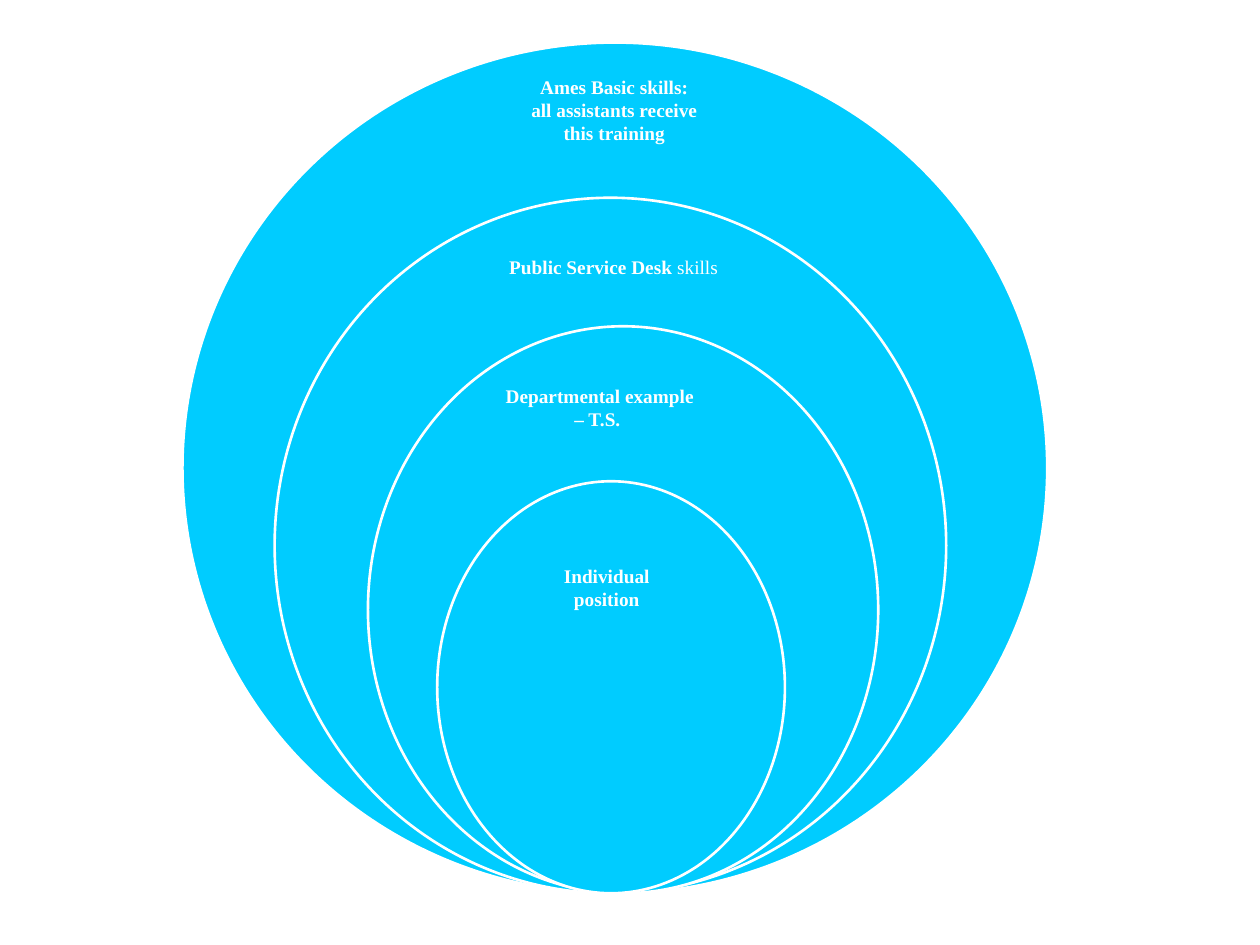
from pptx import Presentation
from pptx.dml.color import RGBColor
from pptx.enum.shapes import MSO_SHAPE
from pptx.enum.text import MSO_ANCHOR, PP_ALIGN
from pptx.util import Inches, Pt

COLORS = {"ring": "00CCFF", "ink": "FFFFFF"}
FONT, SIZE = "Times New Roman", 11
WIDE, HIGH = Inches(10), Inches(7.5)
BASE = 94.53  # shared bottom of all rings, % of slide height

# Outer to inner, in % of the slide: ring (left, width, top), line width,
# label (left, width, top, height), paragraphs of (text, bold) runs
RINGS = [
    ((14.5, 68.6, 4.53), 1.25, (37.7, 22.1, 7.33, 13.6),
     [[("Ames Basic skills:", True)],
      [("all assistants receive", True)],
      [("this training", True)]]),
    ((21.8, 53.3, 20.93), 1.5, (37.7, 22, 26.4, 5.47),
     [[("Public Service Desk", True), (" skills", False)]]),
    ((29.2, 40.5, 34.53), 1.5, (39, 17.2, 40, 10.93),
     [[("Departmental example – T.S. ", True)]]),
    ((34.7, 27.6, 50.93), 1.5, (41.4, 13.5, 59.07, 12.27),
     [[("Individual position", True)]]),
]


def color(name):
    return RGBColor.from_string(COLORS[name])


def add_part(group, kind, left, top, width, height):
    """Place a filled shape, given in % of the slide."""
    part = group.shapes.add_shape(
        kind, int(WIDE * left / 100), int(HIGH * top / 100),
        int(WIDE * width / 100), int(HIGH * height / 100))
    part.shadow.inherit = False
    part.fill.solid()
    part.fill.fore_color.rgb = color("ring")
    return part


def add_ring(group, box, weight):
    left, width, top = box
    ring = add_part(group, MSO_SHAPE.OVAL, left, top, width, BASE - top)
    ring.line.color.rgb = color("ink")
    ring.line.width = Pt(weight)


def add_label(group, box, lines):
    left, width, top, height = box
    label = add_part(group, MSO_SHAPE.RECTANGLE, left, top, width, height)
    label.line.fill.background()
    frame = label.text_frame
    frame.word_wrap = True
    frame.vertical_anchor = MSO_ANCHOR.TOP
    for i, runs in enumerate(lines):
        para = frame.add_paragraph() if i else frame.paragraphs[0]
        para.alignment = PP_ALIGN.CENTER
        for text, bold in runs:
            run = para.add_run()
            run.text = text
            run.font.name = FONT
            run.font.size = Pt(SIZE)
            run.font.bold = bold
            run.font.color.rgb = color("ink")


def main():
    deck = Presentation()
    deck.slide_width, deck.slide_height = WIDE, HIGH
    slide = deck.slides.add_slide(deck.slide_layouts[6])

    # Nested rings, each with its label
    group = slide.shapes.add_group_shape()
    for ring, weight, label, lines in RINGS:
        add_ring(group, ring, weight)
        add_label(group, label, lines)

    deck.save("out.pptx")


if __name__ == "__main__":
    main()
